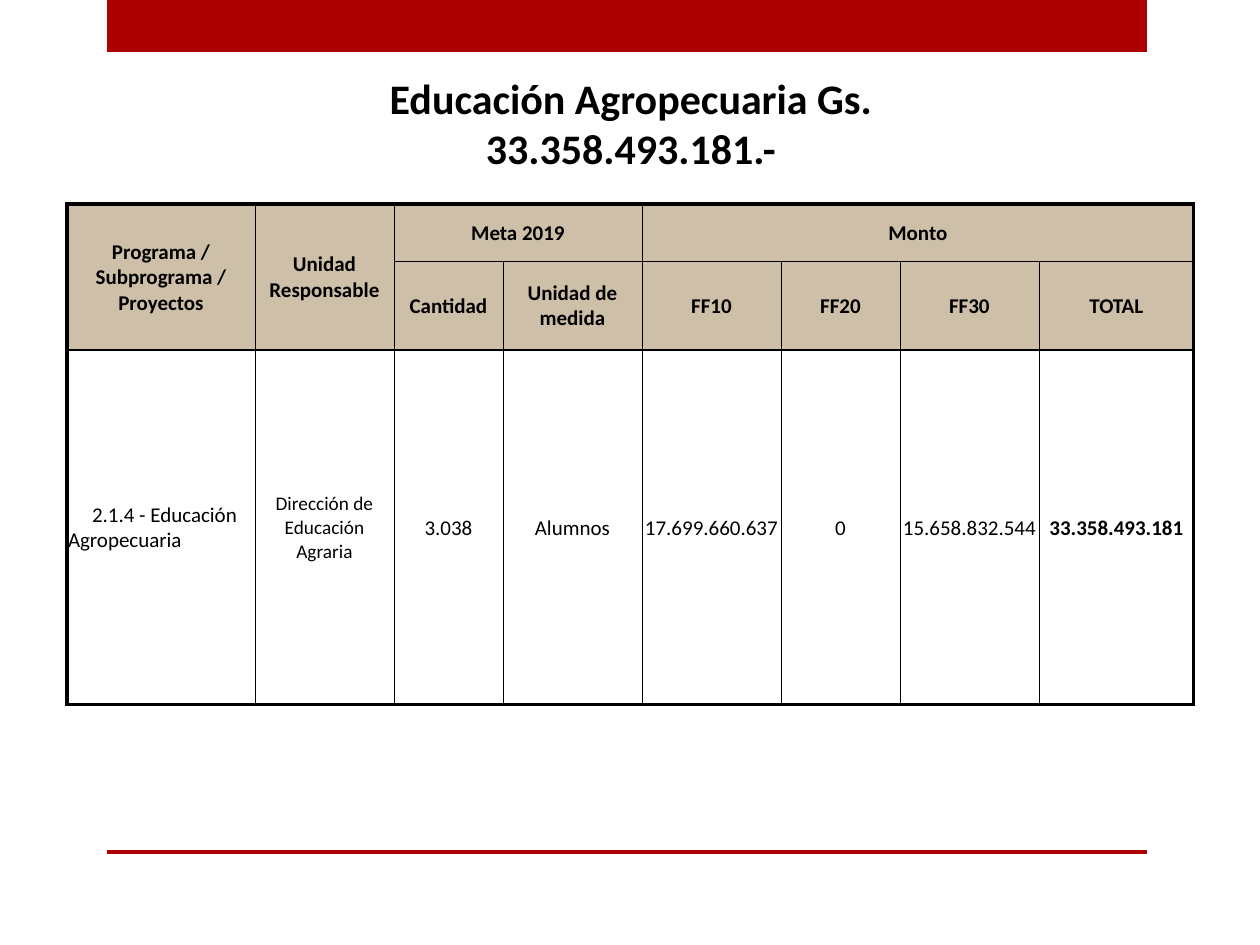
import pptx
import pptx.dml.color
import pptx.enum.shapes
import pptx.enum.text
import pptx.oxml
import pptx.oxml.ns
import pptx.util
from dataclasses import dataclass

TITLE = "Educación Agropecuaria Gs. 33.358.493.181.-"
TITLE_BOX = (353, 66, 556, 115)
BARS = [(107, 0, 1040, 52), (107, 850, 1040, 4)]

TABLE_ORIGIN = (67, 204)
COLUMN_WIDTHS = [188, 139, 109, 139, 139, 119, 139, 155]
ROW_HEIGHTS = [57, 89, 355]
HEADER_ROWS = 2
ROWS = [
    ["Programa / Subprograma / Proyectos", "Unidad Responsable",
     "Meta 2019", "", "Monto", "", "", ""],
    ["", "", "Cantidad", "Unidad de medida", "FF10", "FF20", "FF30", "TOTAL"],
    ["2.1.4 - Educación Agropecuaria", "Dirección de Educación Agraria",
     "3.038", "Alumnos", "17.699.660.637", "0", "15.658.832.544",
     "33.358.493.181"],
]
MERGES = [((0, 0), (1, 0)), ((0, 1), (1, 1)), ((0, 2), (0, 3)), ((0, 4), (0, 7))]
PROGRAM_COLUMN, UNIT_COLUMN, TOTAL_COLUMN = 0, 1, 7
PROGRAM_INDENT = 24


@dataclass(frozen=True)
class Theme:
    font: str = "Calibri"
    red: str = "AD0101"
    header: str = "CDBFA8"
    body: str = "FFFFFF"
    ink: str = "000000"
    title_size: int = 24
    cell_size: int = 12
    unit_size: int = 11
    outer_line: float = 2
    header_line: float = 1
    inner_line: float = 0.5


THEME = Theme()


def px(length):
    return round(length * 914400 / 126)


def rgb(value):
    return pptx.dml.color.RGBColor.from_string(value)


def write(text_frame, text, size, bold, alignment):
    text_frame.text = text
    text_frame.word_wrap = True
    paragraph = text_frame.paragraphs[0]
    paragraph.alignment = alignment
    for run in paragraph.runs:
        run.font.name = THEME.font
        run.font.size = pptx.util.Pt(size)
        run.font.bold = bold
        run.font.color.rgb = rgb(THEME.ink)
    return paragraph


def add_bar(slide, box):
    bar = slide.shapes.add_shape(
        pptx.enum.shapes.MSO_SHAPE.RECTANGLE, *map(px, box))
    bar.shadow.inherit = False
    bar.fill.solid()
    bar.fill.fore_color.rgb = rgb(THEME.red)
    bar.line.fill.background()


def set_borders(cell, row, column):
    """Thick around the table, medium below the header, thin elsewhere."""
    def weight(edge, last):
        return THEME.outer_line if edge in (0, last) else THEME.inner_line

    def horizontal(edge):
        if edge == HEADER_ROWS:
            return THEME.header_line
        return weight(edge, len(ROW_HEIGHTS))

    row_end = row + (cell.span_height if cell.is_merge_origin else 1)
    column_end = column + (cell.span_width if cell.is_merge_origin else 1)
    last_column = len(COLUMN_WIDTHS)
    borders = [("lnL", weight(column, last_column)),
               ("lnR", weight(column_end, last_column)),
               ("lnT", horizontal(row)), ("lnB", horizontal(row_end))]
    properties = cell._tc.get_or_add_tcPr()
    for position, (tag, points) in enumerate(borders):
        properties.insert(position, pptx.oxml.parse_xml(
            f'<a:{tag} {pptx.oxml.ns.nsdecls("a")} w="{pptx.util.Pt(points)}">'
            f'<a:solidFill><a:srgbClr val="{THEME.ink}"/></a:solidFill></a:{tag}>'))


def style_cell(cell, row, column):
    is_header = row < HEADER_ROWS
    is_program = not is_header and column == PROGRAM_COLUMN
    is_unit = not is_header and column == UNIT_COLUMN
    align = pptx.enum.text.PP_ALIGN
    cell.fill.solid()
    cell.fill.fore_color.rgb = rgb(THEME.header if is_header else THEME.body)
    cell.vertical_anchor = pptx.enum.text.MSO_ANCHOR.MIDDLE
    cell.margin_left = cell.margin_right = cell.margin_top = px(1)
    cell.margin_bottom = 0
    paragraph = write(cell.text_frame, ROWS[row][column],
                      THEME.unit_size if is_unit else THEME.cell_size,
                      is_header or column == TOTAL_COLUMN,
                      align.LEFT if is_program else align.CENTER)
    if is_program:
        paragraph._p.get_or_add_pPr().set("indent", str(px(PROGRAM_INDENT)))
    set_borders(cell, row, column)


def add_budget_table(slide):
    table = slide.shapes.add_table(
        len(ROW_HEIGHTS), len(COLUMN_WIDTHS), *map(px, TABLE_ORIGIN),
        px(sum(COLUMN_WIDTHS)), px(sum(ROW_HEIGHTS))).table
    table.first_row = table.horz_banding = False
    for column, width in zip(table.columns, COLUMN_WIDTHS):
        column.width = px(width)
    for row, height in zip(table.rows, ROW_HEIGHTS):
        row.height = px(height)
    for first, last in MERGES:
        table.cell(*first).merge(table.cell(*last))
    for row in range(len(ROW_HEIGHTS)):
        for column in range(len(COLUMN_WIDTHS)):
            cell = table.cell(row, column)
            if not cell.is_spanned:
                style_cell(cell, row, column)


def main():
    presentation = pptx.Presentation()
    presentation.slide_width = px(1260)
    presentation.slide_height = px(945)
    slide = presentation.slides.add_slide(presentation.slide_layouts[6])
    for box in BARS:
        add_bar(slide, box)
    title = slide.shapes.add_textbox(*map(px, TITLE_BOX))
    write(title.text_frame, TITLE, THEME.title_size, True,
          pptx.enum.text.PP_ALIGN.CENTER)
    add_budget_table(slide)
    presentation.save("out.pptx")


if __name__ == "__main__":
    main()
